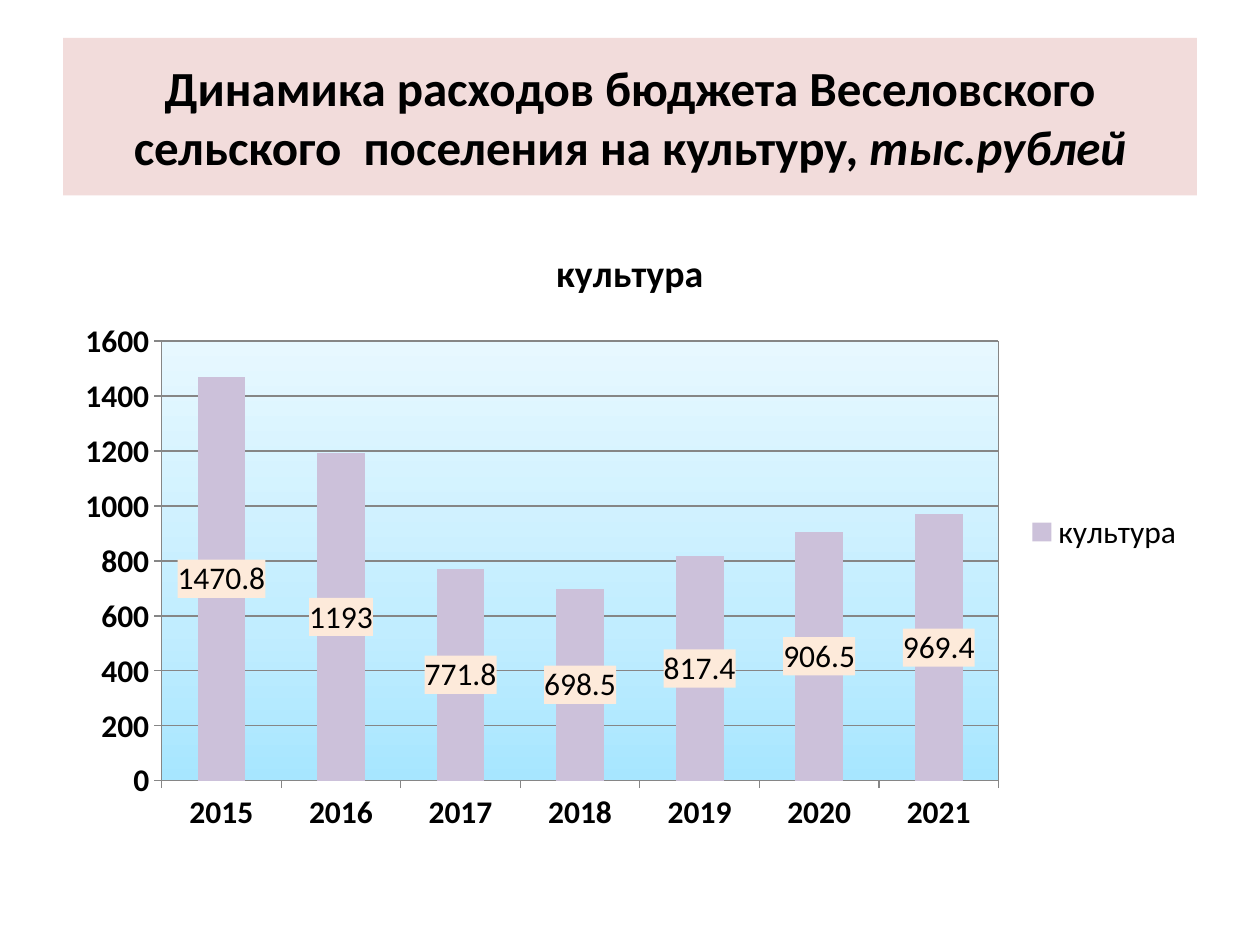
import pptx
import pptx.chart.data
import pptx.dml.color
import pptx.enum.chart
import pptx.enum.text
import pptx.oxml
import pptx.oxml.ns
import pptx.util

WIDE, HIGH = 10, 7.5
EDGE = 0.05
FONT = "Calibri"
INK, GREY, MAUVE, PINK, PEACH = "000000", "868686", "CCC1DA", "F2DCDB", "FDEADA"
SKY = [(0, "A7E6FF"), (35, "C1EDFF"), (100, "E7F8FF")]
NAME = "культура"
YEARS = [str(year) for year in range(2015, 2022)]
COSTS = [1470.8, 1193, 771.8, 698.5, 817.4, 906.5, 969.4]
HEAD = [
    ("Динамика расходов бюджета Веселовского сельского  поселения на культуру, ", False),
    ("тыс.рублей", True),
]


def tint(code):
    """Turn a hex string into a colour."""
    return pptx.dml.color.RGBColor.from_string(code)


def paint(fill, code):
    """Make a fill solid."""
    fill.solid()
    fill.fore_color.rgb = tint(code)


def style(font, size, bold=False):
    """Set the shared font with a size and weight."""
    font.name, font.size, font.bold = FONT, pptx.util.Pt(size), bold
    font.color.rgb = tint(INK)


def area(left, top, width, height):
    """Turn shares of the slide into lengths."""
    shares = (left * WIDE, top * HIGH, width * WIDE, height * HIGH)
    return [pptx.util.Inches(share) for share in shares]


def node(text):
    """Parse a chart part."""
    spaces = pptx.oxml.ns.nsdecls("c", "a")
    return pptx.oxml.parse_xml(text.replace(">", f" {spaces}>", 1))


def solid(code):
    """Write a solid fill."""
    return f'<a:solidFill><a:srgbClr val="{code}"/></a:solidFill>'


def add_head(slide):
    """Fill and place the title."""
    title = slide.shapes.title
    title.left, title.top, title.width, title.height = area(EDGE, 0.04, 1 - 2 * EDGE, 1 / 6)
    paint(title.fill, PINK)
    frame = title.text_frame
    frame.word_wrap = True
    frame.auto_size = pptx.enum.text.MSO_AUTO_SIZE.NONE
    frame.vertical_anchor = pptx.enum.text.MSO_ANCHOR.MIDDLE
    line = frame.paragraphs[0]
    line.alignment = pptx.enum.text.PP_ALIGN.CENTER
    for text, slant in HEAD:
        run = line.add_run()
        run.text = text
        style(run.font, 28, True)
        run.font.italic = slant


def set_axis(axis):
    """Style one axis."""
    style(axis.tick_labels.font, 18, True)
    axis.format.line.color.rgb = tint(GREY)
    axis.major_tick_mark = pptx.enum.chart.XL_TICK_MARK.OUTSIDE


def set_plot(chart):
    """Place the plot and give it a gradient."""
    plot = chart.element.xpath(".//c:plotArea")[0]
    for old in plot.xpath("c:layout"):
        plot.remove(old)
    sides = {"x": 0.087, "y": 0.194, "w": 0.738, "h": 0.705}
    modes = "".join(f'<c:{key}Mode val="edge"/>' for key in "xy")
    spots = "".join(f'<c:{key} val="{share}"/>' for key, share in sides.items())
    plot.insert(0, node(
        f'<c:layout><c:manualLayout><c:layoutTarget val="inner"/>{modes}{spots}'
        "</c:manualLayout></c:layout>"))
    stops = "".join(
        f'<a:gs pos="{spot * 1000}"><a:srgbClr val="{code}"/></a:gs>' for spot, code in SKY)
    plot.append(node(
        f"<c:spPr><a:gradFill><a:gsLst>{stops}</a:gsLst>"
        f'<a:lin ang="{270 * 60000}" scaled="0"/></a:gradFill>'
        f"<a:ln>{solid(GREY)}</a:ln></c:spPr>"))


def set_bars(chart):
    """Style the columns and their labels."""
    plot = chart.plots[0]
    plot.gap_width, plot.overlap, plot.vary_by_categories = 150, 100, False
    bars = plot.series[0]
    paint(bars.format.fill, MAUVE)
    labels = bars.data_labels
    labels.show_value = True
    labels.position = pptx.enum.chart.XL_LABEL_POSITION.CENTER
    style(labels.font, 18)
    text = chart.element.xpath(".//c:ser/c:dLbls/c:txPr")[0]
    text.addprevious(node(f"<c:spPr>{solid(PEACH)}</c:spPr>"))


def add_graph(slide):
    """Add the column chart."""
    data = pptx.chart.data.CategoryChartData()
    data.categories = YEARS
    data.add_series(NAME, COSTS)
    kind = pptx.enum.chart.XL_CHART_TYPE.COLUMN_STACKED
    chart = slide.shapes.add_chart(kind, *area(EDGE, 0.233, 1 - 2 * EDGE, 0.66), data).chart
    style(chart.font, 18)
    chart.has_title = True
    run = chart.chart_title.text_frame.paragraphs[0].add_run()
    run.text = NAME
    style(run.font, 21.6, True)
    chart.has_legend = True
    chart.legend.position = pptx.enum.chart.XL_LEGEND_POSITION.RIGHT
    chart.legend.include_in_layout = False
    style(chart.legend.font, 18)
    for axis in (chart.category_axis, chart.value_axis):
        set_axis(axis)
    scale = chart.value_axis
    scale.minimum_scale, scale.maximum_scale, scale.major_unit = 0, 1600, 200
    scale.major_gridlines.format.line.color.rgb = tint(GREY)
    set_bars(chart)
    set_plot(chart)


def main():
    """Build and save the slide."""
    deck = pptx.Presentation()
    deck.slide_width = pptx.util.Inches(WIDE)
    deck.slide_height = pptx.util.Inches(HIGH)
    slide = deck.slides.add_slide(deck.slide_layouts[5])
    add_head(slide)
    add_graph(slide)
    deck.save("out.pptx")


if __name__ == "__main__":
    main()
